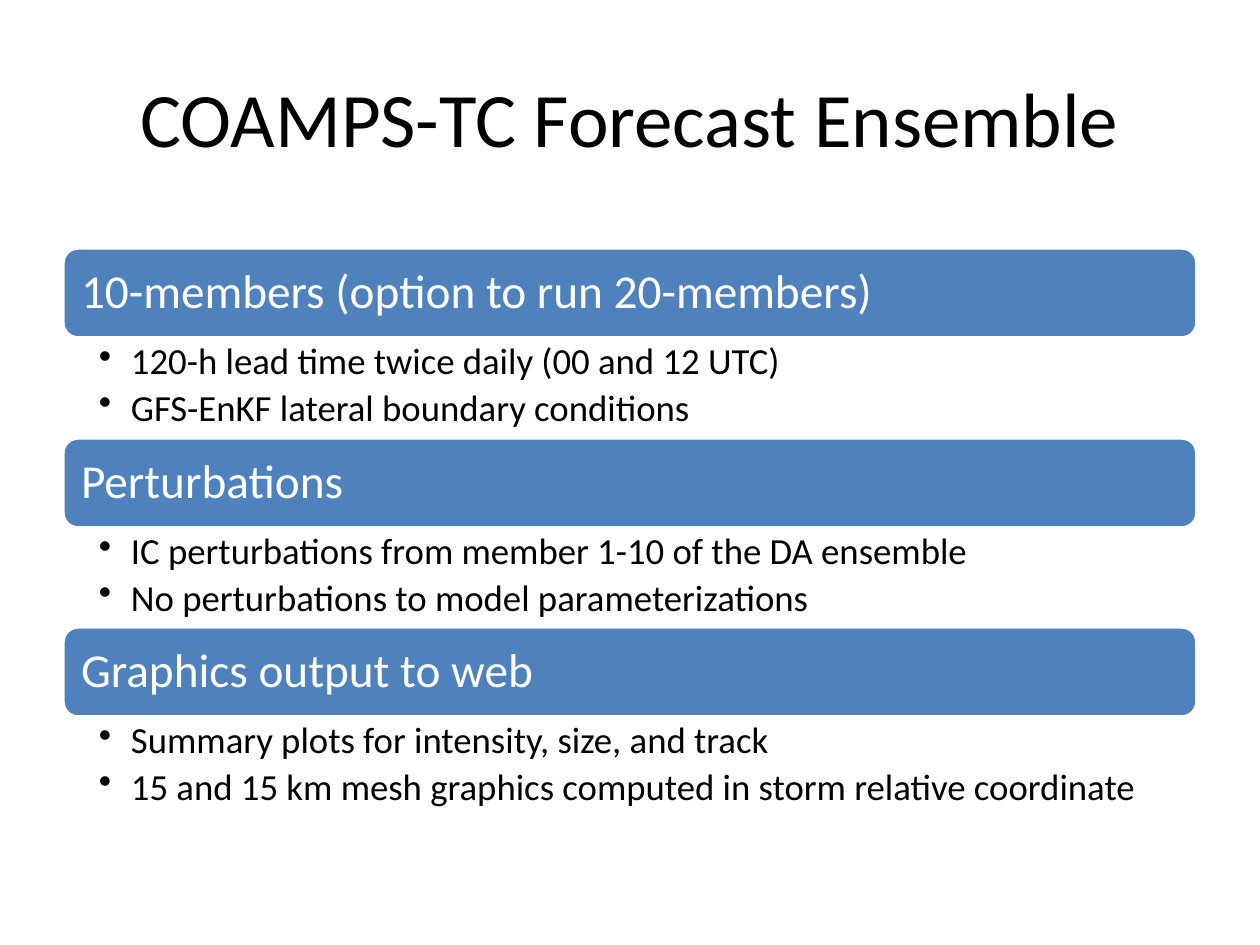
from lxml import etree
from pptx import Presentation
from pptx import util as u
from pptx.dml.color import RGBColor
from pptx.enum import shapes, text
from pptx.oxml.ns import qn

PX = u.Inches(1) / 126
FONT = "Calibri"
BLACK = RGBColor(0x00, 0x00, 0x00)
WHITE = RGBColor(0xFF, 0xFF, 0xFF)
BLUE = RGBColor(0x4F, 0x81, 0xBD)

LEFT, WIDTH = 63, 1134
FIRST_TOP, LAST_TOP = 248, 627
BAR_HEIGHT, DETAIL_HEIGHT = 90, 100
HEADING_INSET = 4
BULLET_INDENT = 32

SECTIONS = [
    ("10-members (option to run 20-members)",
     ["120-h lead time twice daily (00 and 12 UTC)",
      "GFS-EnKF lateral boundary conditions"]),
    ("Perturbations",
     ["IC perturbations from member 1-10 of the DA ensemble",
      "No perturbations to model parameterizations"]),
    ("Graphics output to web",
     ["Summary plots for intensity, size, and track",
      "15 and 15 km mesh graphics computed in storm relative coordinate"]),
]


def px(length):
    return u.Emu(round(length * PX))


def add_text_frame(slide, box, margins, anchor):
    """Add a wrapping text box; margins are left, top, right, bottom."""
    frame = slide.shapes.add_textbox(*map(px, box)).text_frame
    frame.word_wrap = True
    frame.vertical_anchor = anchor
    (frame.margin_left, frame.margin_top,
     frame.margin_right, frame.margin_bottom) = map(px, margins)
    return frame


def add_run(paragraph, words, size, color):
    run = paragraph.add_run()
    run.text = words
    run.font.name = FONT
    run.font.size = u.Pt(size)
    run.font.color.rgb = color


def set_bullet(paragraph):
    properties = paragraph._p.get_or_add_pPr()
    properties.set("marL", str(px(BULLET_INDENT)))
    properties.set("indent", str(-px(BULLET_INDENT)))
    etree.SubElement(properties, qn("a:buChar"), char="•")


def add_title(slide, words):
    frame = add_text_frame(slide, (LEFT, 38, WIDTH, 157), (13, 6, 13, 6),
                           text.MSO_ANCHOR.MIDDLE)
    frame.paragraphs[0].alignment = text.PP_ALIGN.CENTER
    add_run(frame.paragraphs[0], words, 44, BLACK)


def add_heading_bar(slide, top, words):
    bar = slide.shapes.add_shape(shapes.MSO_SHAPE.ROUNDED_RECTANGLE,
                                 *map(px, (LEFT, top, WIDTH, BAR_HEIGHT)))
    bar.shadow.inherit = False
    bar.fill.solid()
    bar.fill.fore_color.rgb = BLUE
    bar.line.color.rgb = WHITE
    bar.line.width = u.Pt(2)

    heading_box = (LEFT + HEADING_INSET, top + HEADING_INSET,
                   WIDTH - 2 * HEADING_INSET, BAR_HEIGHT - 2 * HEADING_INSET)
    frame = add_text_frame(slide, heading_box, (14,) * 4,
                           text.MSO_ANCHOR.MIDDLE)
    frame.paragraphs[0].line_spacing = 0.9
    add_run(frame.paragraphs[0], words, 27, WHITE)


def add_details(slide, top, details):
    frame = add_text_frame(slide, (LEFT, top, WIDTH, DETAIL_HEIGHT),
                           (36, 5, 26, 5), text.MSO_ANCHOR.TOP)
    for index, detail in enumerate(details):
        paragraph = frame.add_paragraph() if index else frame.paragraphs[0]
        set_bullet(paragraph)
        paragraph.level = 1
        paragraph.line_spacing = 0.9
        paragraph.space_after = u.Pt(4)
        add_run(paragraph, detail, 21, BLACK)


def main():
    deck = Presentation()
    deck.slide_width, deck.slide_height = px(1260), px(945)
    slide = deck.slides.add_slide(deck.slide_layouts[6])
    add_title(slide, "COAMPS-TC Forecast Ensemble")
    pitch = (LAST_TOP - FIRST_TOP) / (len(SECTIONS) - 1)
    for index, (heading, details) in enumerate(SECTIONS):
        top = round(FIRST_TOP + index * pitch)
        add_heading_bar(slide, top, heading)
        add_details(slide, top + BAR_HEIGHT, details)
    deck.save("out.pptx")


if __name__ == "__main__":
    main()
